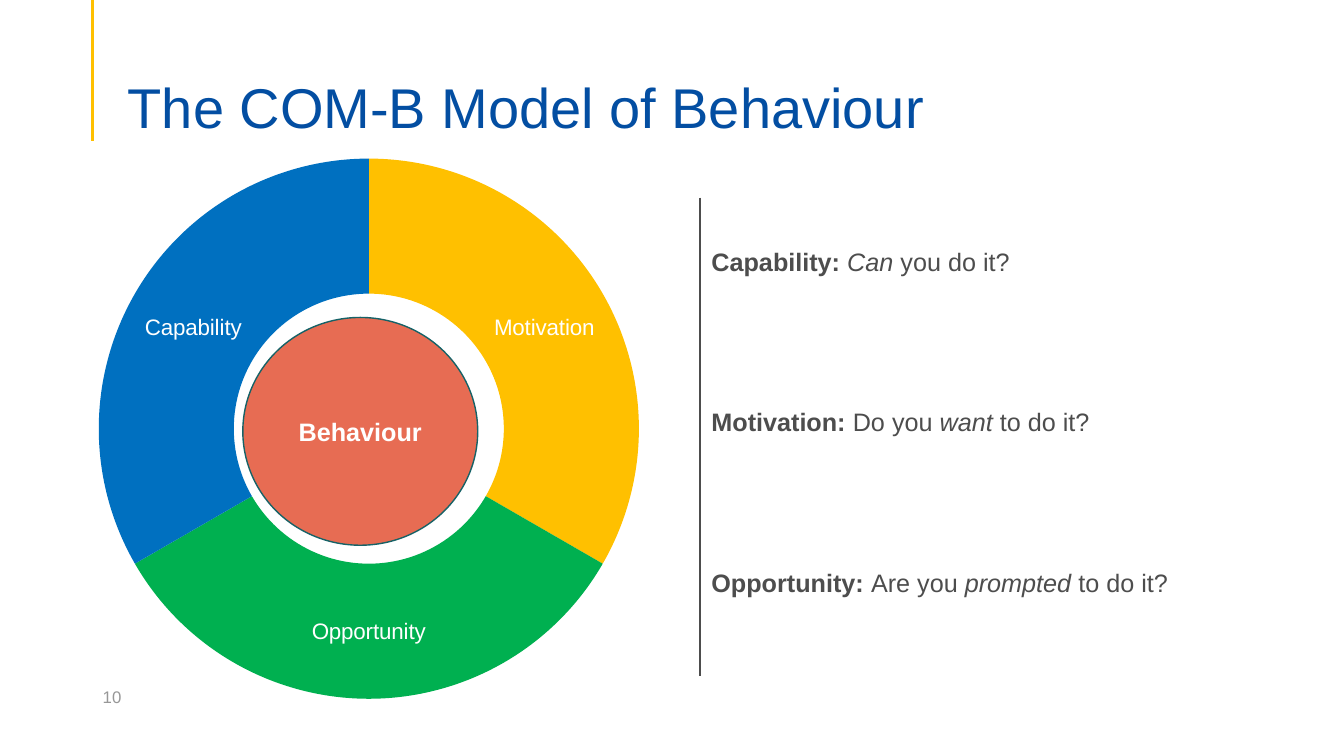
"""Build the COM-B behaviour model slide."""
from lxml import etree
from pptx import Presentation
from pptx import util as u
from pptx.chart.data import CategoryChartData
from pptx.dml.color import RGBColor
from pptx.enum import chart as kinds, shapes, text
from pptx.oxml import parse_xml
from pptx.oxml.ns import qn

FACE = "Arial"
GREY = "4D4D4D"
GOLD = "FFC000"
WHITE = "FFFFFF"
TITLE = "The COM-B Model of Behaviour"
PAGE = "10"
CORE = "Behaviour"
PARTS = [("Motivation", 33, GOLD), ("Opportunity", 33, "00B050"),
         ("Capability", 33, "0070C0")]
ASKS = [
    [("Capability: ", "b"), ("Can", "i"), (" you do it?", "")],
    [("Motivation: ", "b"), ("Do you ", ""), ("want", "i"), (" to do it?", "")],
    [("Opportunity: ", "b"), ("Are you ", ""), ("prompted", "i"), (" to do it?", "")],
]
RING = (-1.96, 3.71, 22.07, 14.33)
PLOT = {"x": 0.2, "y": 0.02, "w": 0.62, "h": 0.95}
DISC = (6.12, 8, 5.92, 5.74)
ASK_TOP, ASK_STEP = 6.07, 4.05


def color(code):
    return RGBColor.from_string(code)


def style(font, size, code, mark=""):
    font.name, font.size = FACE, u.Pt(size)
    font.color.rgb = color(code)
    font.bold, font.italic = "b" in mark, "i" in mark


def write(para, runs, size, code):
    for words, mark in runs:
        run = para.add_run()
        run.text = words
        style(run.font, size, code, mark)


def label(slide, box, runs, size, code, anchor=text.MSO_ANCHOR.TOP):
    frame = slide.shapes.add_textbox(*map(u.Cm, box)).text_frame
    frame.word_wrap = True
    frame.vertical_anchor = anchor
    write(frame.paragraphs[0], runs, size, code)
    return frame


def rule(slide, left, top, end, code, width):
    line = slide.shapes.add_connector(
        shapes.MSO_CONNECTOR.STRAIGHT, *map(u.Cm, (left, top, left, end)))
    line.line.color.rgb = color(code)
    line.line.width = u.Pt(width)
    etree.SubElement(line._element.spPr, qn("a:effectLst"))


def place(chart):
    area = chart._chartSpace.chart.plotArea
    for old in area.findall(qn("c:layout")):
        area.remove(old)
    sides = "".join(f'<c:{key} val="{val}"/>' for key, val in PLOT.items())
    area.insert(0, parse_xml(
        '<c:layout xmlns:c="http://schemas.openxmlformats.org/drawingml/2006/chart">'
        '<c:manualLayout><c:layoutTarget val="inner"/><c:xMode val="edge"/>'
        f'<c:yMode val="edge"/>{sides}</c:manualLayout></c:layout>'))
    area.find(".//" + qn("c:holeSize")).set("val", "46")


def ring(slide):
    data = CategoryChartData()
    data.categories = ["1", "2", "3"]
    data.add_series("Series 1", [val for _, val, _ in PARTS])
    chart = slide.shapes.add_chart(
        kinds.XL_CHART_TYPE.DOUGHNUT, *map(u.Cm, RING), data).chart
    chart.has_legend = chart.has_title = False
    style(chart.font, 10, GREY)
    plot = chart.plots[0]
    plot.vary_by_categories = True
    plot.has_data_labels = True
    plot.data_labels.show_percentage = True
    style(plot.data_labels.font, 16, WHITE)
    for num, (name, _, code) in enumerate(PARTS):
        point = plot.series[0].points[num]
        point.format.fill.solid()
        point.format.fill.fore_color.rgb = color(code)
        point.format.line.fill.background()
        para = point.data_label.text_frame.paragraphs[0]
        write(para, [(name, "")], 16, WHITE)
    place(chart)


def disc(slide):
    shape = slide.shapes.add_shape(
        shapes.MSO_SHAPE.FLOWCHART_CONNECTOR, *map(u.Cm, DISC))
    shape.shadow.inherit = False
    shape.fill.solid()
    shape.fill.fore_color.rgb = color("E76C53")
    shape.line.color.rgb = color("166267")
    shape.line.width = u.Pt(1)
    frame = shape.text_frame
    frame.vertical_anchor = text.MSO_ANCHOR.MIDDLE
    para = frame.paragraphs[0]
    para.alignment = text.PP_ALIGN.CENTER
    write(para, [(CORE, "b")], 18, WHITE)


def main():
    deck = Presentation()
    deck.slide_width, deck.slide_height = u.Cm(33.87), u.Cm(19.05)
    slide = deck.slides.add_slide(deck.slide_layouts[6])
    rule(slide, 2.34, 0, 3.56, GOLD, 2.25)
    head = label(slide, (2.97, 1.37, 30.3, 2.18), [(TITLE, "")], 40,
                 "034EA2", text.MSO_ANCHOR.BOTTOM)
    head.margin_bottom = 0
    head.paragraphs[0].line_spacing = 0.9
    label(slide, (2.34, 17.04, 7.62, 1.02), [(PAGE, "")], 12, "979797",
          text.MSO_ANCHOR.MIDDLE)
    ring(slide)
    disc(slide)
    rule(slide, 17.65, 4.98, 17.04, GREY, 1.5)
    for num, runs in enumerate(ASKS):
        label(slide, (17.68, ASK_TOP + num * ASK_STEP, 15.34, 1.02), runs, 18, GREY)
    deck.save("out.pptx")


if __name__ == "__main__":
    main()
